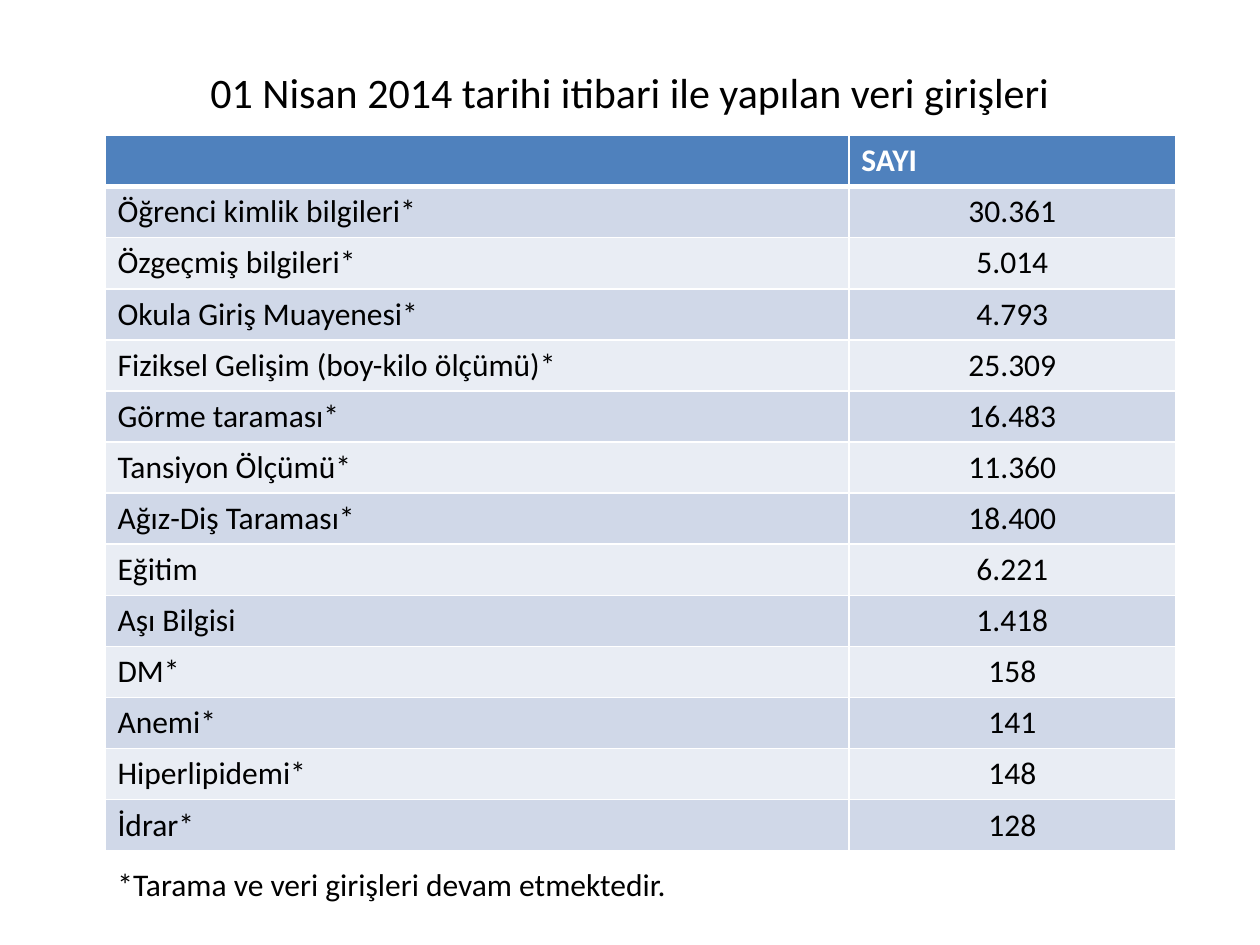
from lxml import etree
from pptx import Presentation
from pptx.dml.color import RGBColor
from pptx.enum import text
from pptx.oxml import ns
from pptx.util import Pt

COLORS = {
    "ink": "000000",
    "white": "FFFFFF",
    "header": "4F81BD",
    "band_dark": "D0D8E8",
    "band_light": "E9EDF4",
}

ENTRIES = [
    ("Öğrenci kimlik bilgileri*", "30.361"),
    ("Özgeçmiş bilgileri*", "5.014"),
    ("Okula Giriş Muayenesi*", "4.793"),
    ("Fiziksel Gelişim (boy-kilo ölçümü)*", "25.309"),
    ("Görme taraması*", "16.483"),
    ("Tansiyon Ölçümü*", "11.360"),
    ("Ağız-Diş Taraması*", "18.400"),
    ("Eğitim", "6.221"),
    ("Aşı Bilgisi", "1.418"),
    ("DM*", "158"),
    ("Anemi*", "141"),
    ("Hiperlipidemi*", "148"),
    ("İdrar*", "128"),
]


class SlideBuilder:
    font = "Calibri"
    size = 18
    row_height = 29.2

    def __init__(self, slide):
        self.s = slide

    def fill_text(self, tf, content, align="LEFT", color="ink", **formats):
        p = tf.paragraphs[0]
        p.alignment = getattr(text.PP_ALIGN, align)
        if not content:
            return
        r = p.add_run()
        r.text = content
        values = {"name": self.font, "size": Pt(self.size), "bold": False}
        values.update(formats)
        for name, value in values.items():
            setattr(r.font, name, value)
        r.font.color.rgb = RGBColor.from_string(COLORS[color])

    def text_box(self, box, content, frame, **formats):
        sp = self.s.shapes.add_textbox(*map(Pt, box))
        tf = sp.text_frame
        for name, value in frame.items():
            setattr(tf, name, value)
        self.fill_text(tf, content, **formats)

    def borders(self, cell, **widths):
        tc_pr = cell._tc.get_or_add_tcPr()
        for side in "LRTB":
            width = Pt(widths.get(side, 1))
            ln = etree.SubElement(tc_pr, ns.qn(f"a:ln{side}"), w=str(width))
            fill = etree.SubElement(ln, ns.qn("a:solidFill"))
            etree.SubElement(fill, ns.qn("a:srgbClr"), val=COLORS["white"])

    def cell(self, cell, content, fill, widths, **formats):
        self.borders(cell, **widths)
        cell.fill.solid()
        cell.fill.fore_color.rgb = RGBColor.from_string(COLORS[fill])
        self.fill_text(cell.text_frame, content, **formats)

    def table(self, left, top, columns, header, rows):
        count = len(rows) + 1
        frame = self.s.shapes.add_table(
            count, len(columns), Pt(left), Pt(top),
            Pt(sum(columns)), Pt(self.row_height * count))
        table = frame.table
        for column, width in zip(table.columns, columns):
            column.width = Pt(width)
        for row in table.rows:
            row.height = Pt(self.row_height)
        for j, label in enumerate(header):
            self.cell(table.cell(0, j), label, "header", {"B": 3},
                      color="white", bold=True)
        for i, row in enumerate(rows, 1):
            fill = "band_dark" if i % 2 else "band_light"
            widths = {"T": 3} if i == 1 else {}
            for j, content in enumerate(row):
                self.cell(table.cell(i, j), content, fill, widths,
                          align="CENTER" if j else "LEFT")


def main():
    prs = Presentation()
    prs.slide_width, prs.slide_height = Pt(720), Pt(540)
    slide = SlideBuilder(prs.slides.add_slide(prs.slide_layouts[6]))
    slide.text_box(
        (36, 21.6, 648, 61.2),
        "01 Nisan 2014 tarihi itibari ile yapılan veri girişleri",
        {"word_wrap": True, "vertical_anchor": text.MSO_ANCHOR.MIDDLE},
        align="CENTER", size=Pt(24))
    slide.table(60, 77.4, (425, 187), ("", "SAYI"), ENTRIES)
    slide.text_box(
        (60, 491, 331, 29),
        "*Tarama ve veri girişleri devam etmektedir.",
        {"word_wrap": False,
         "auto_size": text.MSO_AUTO_SIZE.SHAPE_TO_FIT_TEXT})
    prs.save("out.pptx")


if __name__ == "__main__":
    main()
